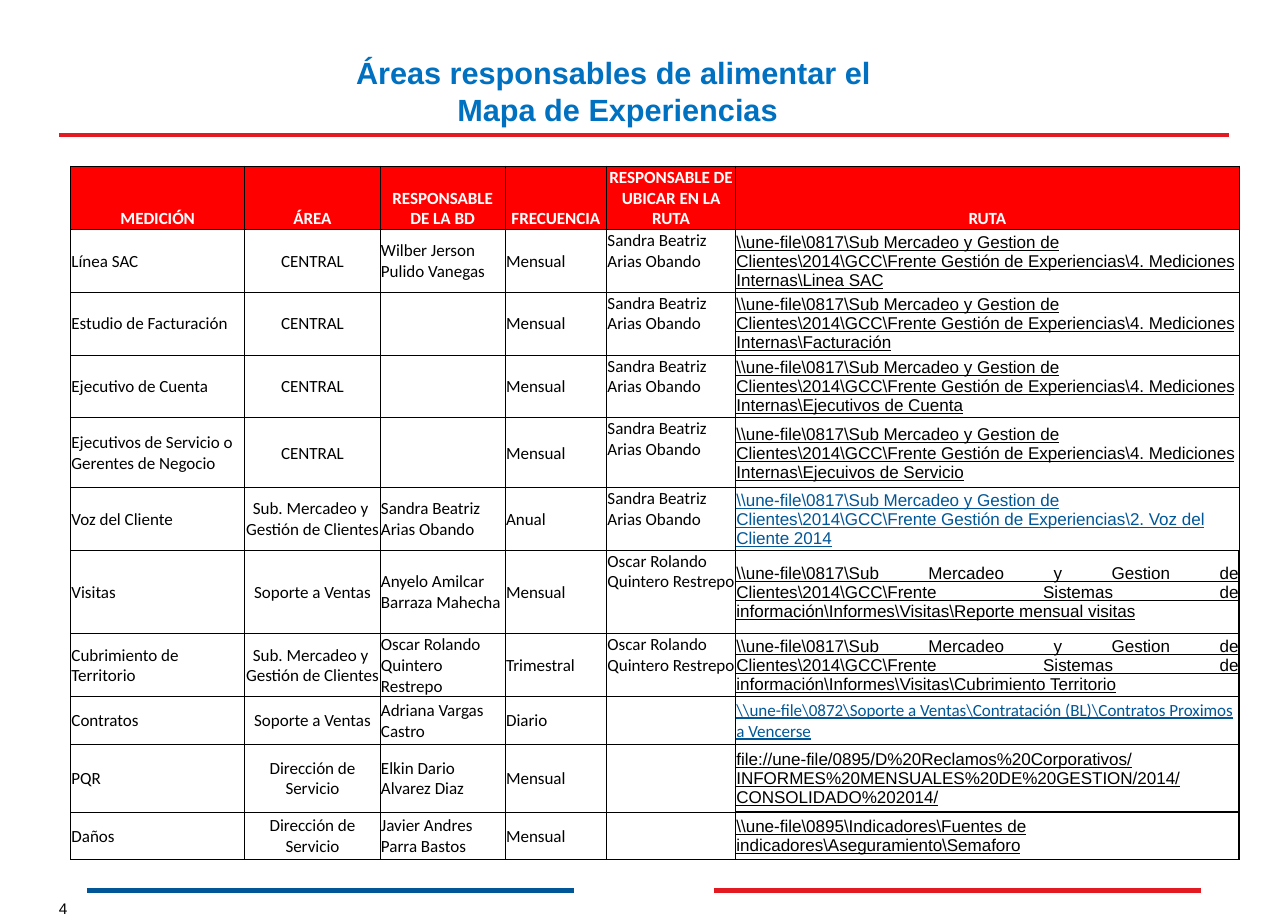
from dataclasses import dataclass

import lxml.etree
import pptx
import pptx.dml.color
import pptx.enum.shapes
import pptx.enum.text
import pptx.oxml.ns
import pptx.util

Cm = pptx.util.Cm
Pt = pptx.util.Pt
RGBColor = pptx.dml.color.RGBColor
Align = pptx.enum.text.PP_ALIGN
Anchor = pptx.enum.text.MSO_ANCHOR

BLACK = RGBColor(0x00, 0x00, 0x00)
WHITE = RGBColor(0xFF, 0xFF, 0xFF)
HEADER_RED = RGBColor(0xFF, 0x00, 0x00)
LINE_RED = RGBColor(0xE4, 0x1A, 0x22)
LINK_BLUE = RGBColor(0x00, 0x56, 0x97)
TITLE_BLUE = RGBColor(0x00, 0x70, 0xC0)


@dataclass
class Rule:
    left: float
    right: float
    top: float
    color: RGBColor
    weight: float


@dataclass
class Measurement:
    height: float
    name: str
    area: str
    owner: str
    frequency: str
    placer: str
    route: str
    route_color: RGBColor = BLACK
    route_font: str = "Arial"
    route_align: Align = Align.LEFT
    heavy_top: bool = False
    heavy_bottom: bool = False


RULES = [
    Rule(1.22, 25.45, 2.79, LINE_RED, 2.25),
    Rule(14.78, 24.87, 18.44, LINE_RED, 3),
    Rule(1.8, 11.89, 18.44, LINK_BLUE, 3),
]

HEADINGS = ["MEDICIÓN", "ÁREA", "RESPONSABLE DE LA BD", "FRECUENCIA",
            "RESPONSABLE DE UBICAR EN LA RUTA", "RUTA"]
COLUMN_WIDTHS = [3.61, 2.8, 2.59, 2.1, 2.67, 10.43]
HEADER_HEIGHT = 1.31

CLIENTS = r"\\une-file\0817\Sub Mercadeo y Gestion de Clientes\2014\GCC"
EXPERIENCES = CLIENTS + r"\Frente Gestión de Experiencias"
INTERNAL = EXPERIENCES + r"\4. Mediciones Internas"
VISITS = CLIENTS + r"\Frente Sistemas de información\Informes\Visitas"
SANDRA = "Sandra Beatriz Arias Obando"
OSCAR = "Oscar Rolando Quintero Restrepo"
CALL_CENTER = "CENTRAL"
MARKET = "Sub. Mercadeo y \nGestión de Clientes"
SALES = "Soporte a Ventas"
SERVICE = "Dirección de Servicio"

MEASUREMENTS = [
    Measurement(1.3, "Línea SAC", CALL_CENTER, "Wilber Jerson Pulido Vanegas", "Mensual",
                SANDRA, INTERNAL + r"\Linea SAC"),
    Measurement(1.3, "Estudio de Facturación", CALL_CENTER, "", "Mensual",
                SANDRA, INTERNAL + r"\Facturación"),
    Measurement(1.3, "Ejecutivo de Cuenta", CALL_CENTER, "", "Mensual",
                SANDRA, INTERNAL + r"\Ejecutivos de Cuenta"),
    Measurement(1.45, "Ejecutivos de Servicio o \nGerentes de Negocio", CALL_CENTER, "",
                "Mensual", SANDRA, INTERNAL + r"\Ejecuivos de Servicio"),
    Measurement(1.29, "Voz del Cliente", MARKET, SANDRA, "Anual",
                SANDRA, EXPERIENCES + r"\2. Voz del Cliente 2014", LINK_BLUE),
    Measurement(1.73, "Visitas", SALES, "Anyelo Amilcar Barraza Mahecha", "Mensual",
                OSCAR, VISITS + r"\Reporte mensual visitas",
                route_align=Align.JUSTIFY, heavy_bottom=True),
    Measurement(1.3, "Cubrimiento de \nTerritorio", MARKET, OSCAR, "Trimestral",
                OSCAR, VISITS + r"\Cubrimiento Territorio",
                route_align=Align.JUSTIFY, heavy_top=True, heavy_bottom=True),
    Measurement(0.99, "Contratos", SALES, "Adriana Vargas Castro", "Diario", "",
                r"\\une-file\0872\Soporte a Ventas\Contratación (BL)\Contratos Proximos a Vencerse",
                LINK_BLUE, "Calibri", heavy_top=True, heavy_bottom=True),
    Measurement(1.4, "PQR", SERVICE, "Elkin Dario Alvarez Diaz", "Mensual", "",
                "file://une-file/0895/D%20Reclamos%20Corporativos/"
                "INFORMES%20MENSUALES%20DE%20GESTION/2014/CONSOLIDADO%202014/",
                heavy_top=True, heavy_bottom=True),
    Measurement(0.99, "Daños", SERVICE, "Javier Andres Parra Bastos", "Mensual", "",
                r"\\une-file\0895\Indicadores\Fuentes de indicadores\Aseguramiento\Semaforo",
                heavy_top=True, heavy_bottom=True),
]


def set_font(para, size: float, color: RGBColor, name: str = "Arial",
             bold: bool = False, underline: bool = False) -> None:
    font = para.font
    font.size, font.name = Pt(size), name
    font.bold, font.underline = bold, underline
    font.color.rgb = color


def add_rule(page, rule: Rule) -> None:
    line = page.shapes.add_connector(
        pptx.enum.shapes.MSO_CONNECTOR.STRAIGHT,
        Cm(rule.left), Cm(rule.top), Cm(rule.right), Cm(rule.top))
    line.line.color.rgb = rule.color
    line.line.width = Pt(rule.weight)
    properties = line._element.spPr
    lxml.etree.SubElement(properties, pptx.oxml.ns.qn("a:effectLst"))


def set_borders(cell, left: float = 0.5, right: float = 0.5,
                top: float = 0.5, bottom: float = 0.5) -> None:
    properties = cell._tc.get_or_add_tcPr()
    for side, weight in zip("LRTB", (left, right, top, bottom)):
        line = lxml.etree.SubElement(properties, pptx.oxml.ns.qn(f"a:ln{side}"),
                                     w=str(Pt(weight)))
        fill = lxml.etree.SubElement(line, pptx.oxml.ns.qn("a:solidFill"))
        lxml.etree.SubElement(fill, pptx.oxml.ns.qn("a:srgbClr"), val=str(BLACK))


def write_cell(cell, text: str, align: Align, anchor: Anchor, color: RGBColor = BLACK,
               font: str = "Calibri", bold: bool = False, underline: bool = False) -> None:
    cell.margin_left = cell.margin_right = cell.margin_top = Cm(0.02)
    cell.margin_bottom = 0
    cell.vertical_anchor = anchor
    para = cell.text_frame.paragraphs[0]
    para.text = text
    para.alignment = align
    set_font(para, 10, color, font, bold, underline)


def add_measurement_table(page) -> None:
    height = HEADER_HEIGHT + sum(item.height for item in MEASUREMENTS)
    table = page.shapes.add_table(
        len(MEASUREMENTS) + 1, len(HEADINGS),
        Cm(1.46), Cm(3.44), Cm(sum(COLUMN_WIDTHS)), Cm(height)).table
    table.first_row = table.horz_banding = False
    for column, width in zip(table.columns, COLUMN_WIDTHS):
        column.width = Cm(width)

    # Header row
    table.rows[0].height = Cm(HEADER_HEIGHT)
    for cell, heading in zip(table.rows[0].cells, HEADINGS):
        set_borders(cell)
        cell.fill.solid()
        cell.fill.fore_color.rgb = HEADER_RED
        write_cell(cell, heading, Align.CENTER, Anchor.BOTTOM, WHITE, bold=True)

    # One row per measurement
    for index, item in enumerate(MEASUREMENTS, start=1):
        row = table.rows[index]
        row.height = Cm(item.height)
        *plain_cells, route_cell = row.cells
        texts = [item.name, item.area, item.owner, item.frequency, item.placer]
        for column, (cell, text) in enumerate(zip(plain_cells, texts)):
            set_borders(cell)
            cell.fill.background()
            write_cell(cell, text, Align.CENTER if column == 1 else Align.LEFT,
                       Anchor.TOP if column == 4 else Anchor.MIDDLE)
        set_borders(route_cell, right=1 if item.heavy_bottom else 0.5,
                    top=1 if item.heavy_top else 0.5,
                    bottom=1 if item.heavy_bottom else 0.5)
        route_cell.fill.background()
        write_cell(route_cell, item.route, item.route_align, Anchor.MIDDLE,
                   item.route_color, item.route_font, underline=True)


def main() -> None:
    deck = pptx.Presentation()
    deck.slide_width, deck.slide_height = Cm(26.67), Cm(19.05)
    page = deck.slides.add_slide(deck.slide_layouts[6])

    # Page number
    number_box = page.shapes.add_textbox(Cm(1.22), Cm(18.62), Cm(0.5), Cm(0.36))
    frame = number_box.text_frame
    frame.margin_left = frame.margin_right = frame.margin_top = frame.margin_bottom = 0
    frame.word_wrap = False
    frame.text = "4"
    set_font(frame.paragraphs[0], 9, BLACK)

    # Coloured rules
    for rule in RULES:
        add_rule(page, rule)

    # Title
    title_box = page.shapes.add_textbox(Cm(4.65), Cm(0.99), Cm(16.28), Cm(1.8))
    title_box.text_frame.word_wrap = True
    title_box.text_frame.text = "Áreas responsables de alimentar el \nMapa de Experiencias"
    for para in title_box.text_frame.paragraphs:
        para.alignment = Align.CENTER
        set_font(para, 18, TITLE_BLUE, bold=True)

    add_measurement_table(page)
    deck.save("out.pptx")


if __name__ == "__main__":
    main()
